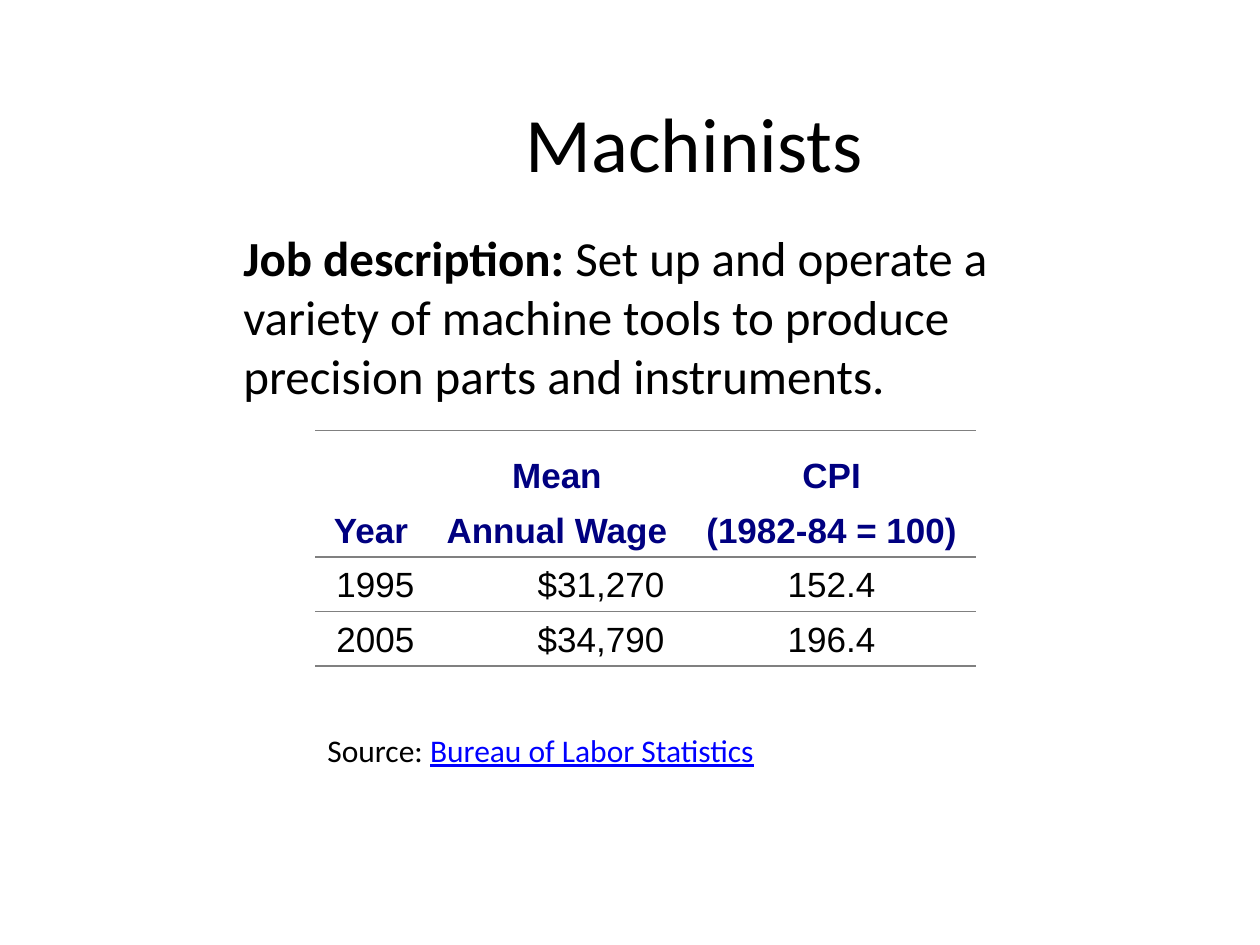
from dataclasses import dataclass

from lxml import etree
from pptx import Presentation
from pptx.dml.color import RGBColor
from pptx.enum.text import MSO_ANCHOR, PP_ALIGN
from pptx.oxml.ns import qn
from pptx.util import Pt

LEFT, CENTER, RIGHT = PP_ALIGN.LEFT, PP_ALIGN.CENTER, PP_ALIGN.RIGHT
TOP, MIDDLE, BOTTOM = MSO_ANCHOR.TOP, MSO_ANCHOR.MIDDLE, MSO_ANCHOR.BOTTOM

BLACK = RGBColor(0x00, 0x00, 0x00)
NAVY = RGBColor(0x00, 0x00, 0x80)
BLUE = RGBColor(0x00, 0x00, 0xFF)
GRAY = RGBColor(0x80, 0x80, 0x80)

HANGING_INDENT = 27
COLUMN_WIDTHS = (64, 148.5, 165.5)
ROW_HEIGHTS = (41, 31.25, 31.25, 31.25)
HEADER_ROWS = 2
WAGE_ROWS = (
    ("", "Mean", "CPI"),
    ("Year", "Annual Wage", "(1982-84 = 100)"),
    ("1995", "$31,270 ", "152.4"),
    ("2005", "$34,790 ", "196.4"),
)
BODY_ALIGNMENTS = (RIGHT, RIGHT, CENTER)


@dataclass(frozen=True)
class TextRun:
    text: str
    size: float
    color: RGBColor = BLACK
    bold: bool = False
    underline: bool = False
    name: str = "Calibri"


@dataclass(frozen=True)
class TextBlock:
    left: float
    top: float
    width: float
    height: float
    runs: tuple[TextRun, ...]
    alignment: PP_ALIGN = LEFT
    anchor: MSO_ANCHOR = MIDDLE


TEXT_BLOCKS = (
    # Title
    TextBlock(90.75, 36, 612, 90, (TextRun("Machinists", 44),), CENTER),
    # Job description
    TextBlock(132, 126, 468, 108.75, (
        TextRun("Job description:", 28, bold=True),
        TextRun(" Set up and operate a variety of machine tools to produce "
                "precision parts and instruments.", 28),
    )),
    # Source line
    TextBlock(180, 414, 420, 36, (
        TextRun("Source: ", 18),
        TextRun("Bureau of Labor Statistics", 18, BLUE, underline=True),
    ), anchor=TOP),
)


def add_run(paragraph, text_run: TextRun) -> None:
    run = paragraph.add_run()
    run.text = text_run.text
    run.font.color.rgb = text_run.color
    formats = {
        "name": text_run.name,
        "size": Pt(text_run.size),
        "bold": text_run.bold,
        "underline": text_run.underline,
    }
    for attribute, value in formats.items():
        setattr(run.font, attribute, value)


def add_text_block(slide, block: TextBlock) -> None:
    shape = slide.shapes.add_textbox(
        Pt(block.left), Pt(block.top), Pt(block.width), Pt(block.height))
    frame = shape.text_frame
    frame.word_wrap = True
    frame.vertical_anchor = block.anchor
    paragraph = frame.paragraphs[0]
    paragraph.alignment = block.alignment
    for text_run in block.runs:
        add_run(paragraph, text_run)


def set_borders(cell, visible_sides: str) -> None:
    """Draw gray lines on the named sides (T, B) and clear the others."""
    properties = cell._tc.get_or_add_tcPr()
    for position, side in enumerate("LRTB"):
        line = etree.Element(qn(f"a:ln{side}"), w=str(Pt(1)))
        if side in visible_sides:
            fill = etree.SubElement(line, qn("a:solidFill"))
            etree.SubElement(fill, qn("a:srgbClr"), val=str(GRAY))
        else:
            etree.SubElement(line, qn("a:noFill"))
        properties.insert(position, line)


def fill_cell(cell, text: str, alignment: PP_ALIGN, is_header: bool) -> None:
    cell.fill.background()
    cell.vertical_anchor = BOTTOM
    if not text:
        return
    paragraph = cell.text_frame.paragraphs[0]
    paragraph.alignment = alignment
    indents = paragraph._p.get_or_add_pPr()
    indents.set("marL", str(Pt(HANGING_INDENT)))
    indents.set("indent", str(Pt(-HANGING_INDENT)))
    color = NAVY if is_header else BLACK
    add_run(paragraph, TextRun(text, 20, color, is_header, name="Arial"))


def add_wage_table(slide) -> None:
    table = slide.shapes.add_table(
        len(ROW_HEIGHTS), len(COLUMN_WIDTHS), Pt(180), Pt(246),
        Pt(sum(COLUMN_WIDTHS)), Pt(sum(ROW_HEIGHTS))).table
    table.first_row = table.horz_banding = False
    for column, width in zip(table.columns, COLUMN_WIDTHS):
        column.width = Pt(width)
    for row, height in zip(table.rows, ROW_HEIGHTS):
        row.height = Pt(height)
    # The two header rows share one frame; each body row has its own
    header_sides = ("T", "B")
    for row_index, texts in enumerate(WAGE_ROWS):
        is_header = row_index < HEADER_ROWS
        sides = header_sides[row_index] if is_header else "TB"
        for column_index, text in enumerate(texts):
            cell = table.cell(row_index, column_index)
            alignment = CENTER if is_header else BODY_ALIGNMENTS[column_index]
            fill_cell(cell, text, alignment, is_header)
            set_borders(cell, sides)


def main() -> None:
    presentation = Presentation()
    presentation.slide_width, presentation.slide_height = Pt(720), Pt(540)
    slide = presentation.slides.add_slide(presentation.slide_layouts[6])
    title, description, source = TEXT_BLOCKS
    add_text_block(slide, title)
    add_text_block(slide, description)
    add_wage_table(slide)
    add_text_block(slide, source)
    presentation.save("out.pptx")


if __name__ == "__main__":
    main()
